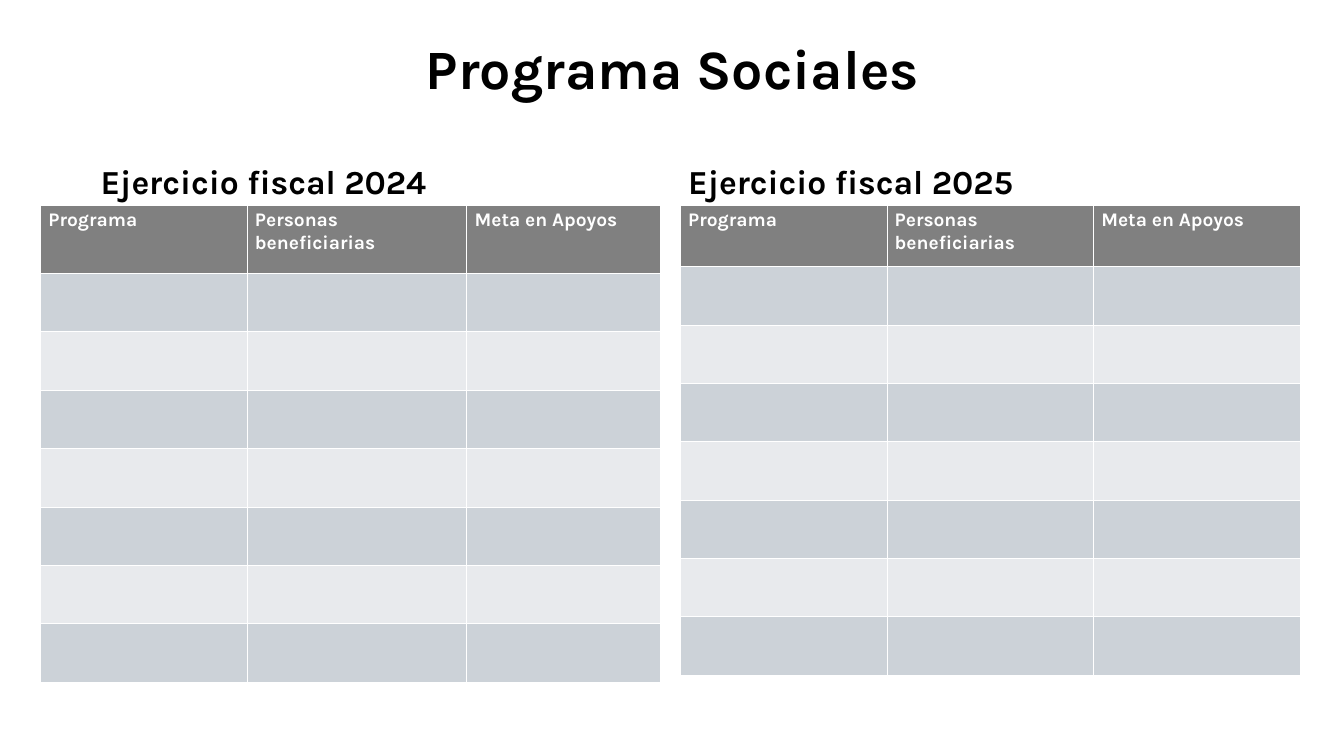
"""Build the slide comparing the social programmes of two fiscal years."""
from dataclasses import dataclass

from pptx import Presentation
from pptx.dml.color import RGBColor
from pptx.enum import text as t
from pptx.util import Inches, Pt

BLACK = RGBColor(0x00, 0x00, 0x00)
WHITE = RGBColor(0xFF, 0xFF, 0xFF)
GRAY = RGBColor(0x80, 0x80, 0x80)
BANDS = (RGBColor(0xCC, 0xD2, 0xD8), RGBColor(0xE8, 0xEA, 0xED))

HEADS = ("Programa", "Personas beneficiarias", "Meta en Apoyos")
BODY_ROWS = 7
ROW_H = 0.76
TABLE_TOP = 2.67
LABEL_TOP = 1.49


@dataclass(frozen=True)
class Year:
    label: str
    holder: int
    label_left: float
    label_width: float
    left: float
    cols: tuple[float, ...]
    head_h: float


YEARS = (
    Year("Ejercicio fiscal 2024", 1, 1.21, 7.4, 0.53, (2.69, 2.86, 2.52), 0.89),
    Year("Ejercicio fiscal 2025", 3, 8.86, 7.44, 8.86, (2.69, 2.69, 2.69), 0.8),
)


def style(para, size: float, color: RGBColor) -> None:
    font = para.font
    font.name, font.size, font.bold = "Karla", Pt(size), True
    font.color.rgb = color


def fill_holder(shape, words: str, box: tuple[float, ...], size: float,
                anchor: t.MSO_ANCHOR, align: t.PP_ALIGN, before: float):
    shape.left, shape.top, shape.width, shape.height = map(Inches, box)
    frame = shape.text_frame
    frame.text = words
    frame.word_wrap = True
    frame.auto_size = t.MSO_AUTO_SIZE.NONE
    frame.vertical_anchor = anchor
    para = frame.paragraphs[0]
    para.alignment = align
    para.line_spacing = 0.9
    para.space_before = Pt(before)
    style(para, size, BLACK)


def add_grid(slide, year: Year) -> None:
    heights = (year.head_h,) + (ROW_H,) * BODY_ROWS
    grid = slide.shapes.add_table(
        len(heights), len(HEADS), Inches(year.left), Inches(TABLE_TOP),
        Inches(sum(year.cols)), Inches(sum(heights))).table
    for col, width in zip(grid.columns, year.cols):
        col.width = Inches(width)
    for i, (row, height) in enumerate(zip(grid.rows, heights)):
        row.height = Inches(height)
        for cell in row.cells:
            cell.fill.solid()
            cell.fill.fore_color.rgb = BANDS[(i - 1) % 2] if i else GRAY
    for cell, head in zip(grid.rows[0].cells, HEADS):
        cell.text = head
        style(cell.text_frame.paragraphs[0], 18, WHITE)


def main() -> None:
    deck = Presentation()
    deck.slide_width, deck.slide_height = Inches(17.5), Inches(9.84)
    slide = deck.slides.add_slide(deck.slide_layouts.get_by_name("Comparison"))
    fill_holder(slide.shapes.title, "Programa Sociales",
                (1.21, 0.52, 15.09, 0.82), 52,
                t.MSO_ANCHOR.MIDDLE, t.PP_ALIGN.CENTER, 0)
    holders = {s.placeholder_format.idx: s for s in slide.placeholders}
    for year in YEARS:
        fill_holder(holders[year.holder], year.label,
                    (year.label_left, LABEL_TOP, year.label_width, 1.18), 31.5,
                    t.MSO_ANCHOR.BOTTOM, t.PP_ALIGN.LEFT, 13.1)
        spare = holders[year.holder + 1].element
        spare.getparent().remove(spare)
        add_grid(slide, year)
    deck.save("out.pptx")


if __name__ == "__main__":
    main()
